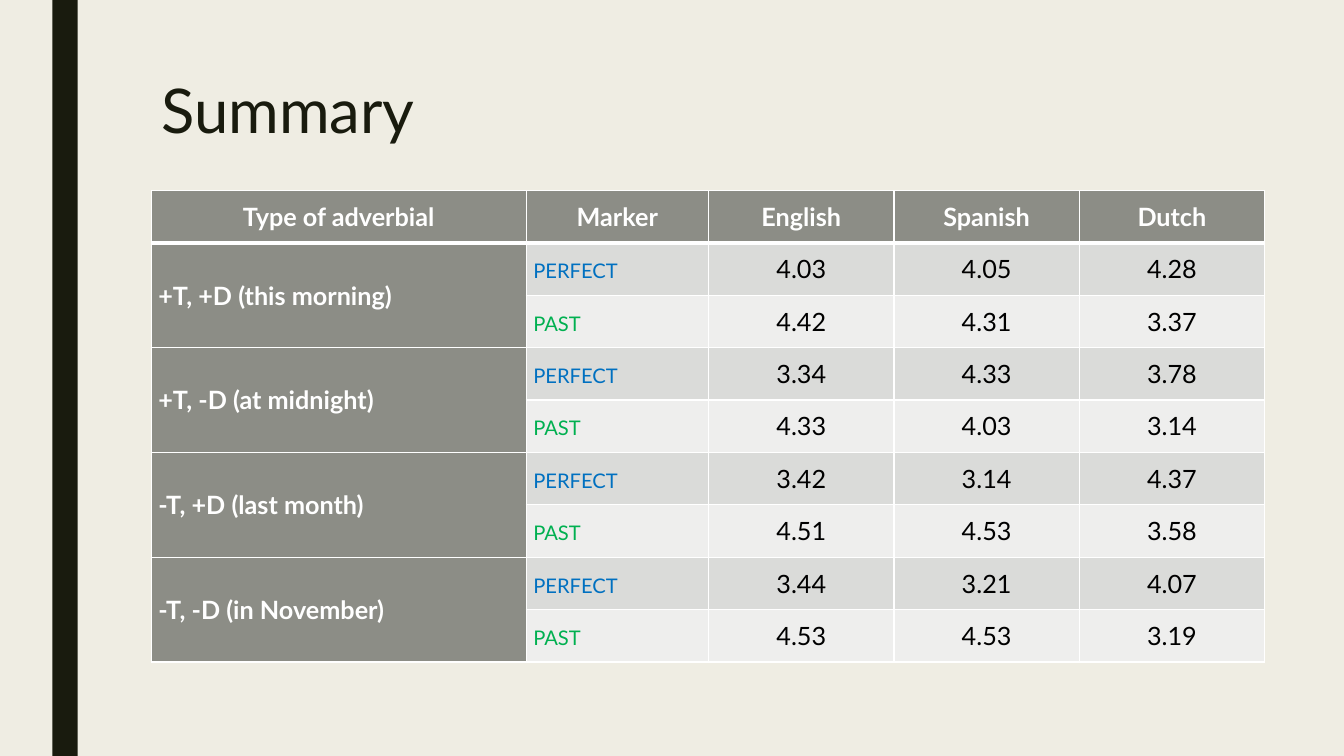
from lxml.etree import SubElement
from pptx import Presentation
from pptx.dml.color import RGBColor
from pptx.enum.shapes import MSO_SHAPE as Shape
from pptx.enum.text import MSO_ANCHOR as Anchor, MSO_AUTO_SIZE as AutoSize, PP_ALIGN as Align
from pptx.oxml.ns import qn
from pptx.util import Cm, Pt

FONT = "Lato"
CREAM = RGBColor(0xEF, 0xED, 0xE3)
INK = RGBColor(0x19, 0x1B, 0x0E)
GRAY = RGBColor(0x8C, 0x8D, 0x86)
DARK_BAND = RGBColor(0xDA, 0xDB, 0xD9)
LIGHT_BAND = RGBColor(0xEE, 0xEE, 0xED)
WHITE = RGBColor(0xFF, 0xFF, 0xFF)
BLACK = RGBColor(0x00, 0x00, 0x00)
BLUE = RGBColor(0x00, 0x70, 0xC0)
GREEN = RGBColor(0x00, 0xB0, 0x50)

HEADINGS = ["Type of adverbial", "Marker", "English", "Spanish", "Dutch"]
MARKERS = [("perfect", BLUE, DARK_BAND), ("past", GREEN, LIGHT_BAND)]
RATINGS = {
    "+T, +D (this morning)": [("4.03", "4.05", "4.28"), ("4.42", "4.31", "3.37")],
    "+T, -D (at midnight)": [("3.34", "4.33", "3.78"), ("4.33", "4.03", "3.14")],
    "-T, +D (last month)": [("3.42", "3.14", "4.37"), ("4.51", "4.53", "3.58")],
    "-T, -D (in November)": [("3.44", "3.21", "4.07"), ("4.53", "4.53", "3.19")],
}
COLUMN_WIDTHS = [9.45, 4.6, 4.67, 4.67, 4.67]
ROW_HEIGHT = 1.32
ROW_COUNT = 1 + len(MARKERS) * len(RATINGS)


def style_font(paragraph, size, color, bold=False):
    font = paragraph.font
    font.name, font.size, font.bold = FONT, Pt(size), bold
    font.color.rgb = color


def add_side_band(slide):
    band = slide.shapes.add_shape(Shape.RECTANGLE, Cm(1.32), 0, Cm(0.64), Cm(19.05))
    band.shadow.inherit = False
    band.fill.solid()
    band.fill.fore_color.rgb = INK
    band.line.fill.background()


def set_title(slide, text):
    title = slide.shapes.title
    title.left, title.top, title.width, title.height = Cm(3.81), Cm(1.91), Cm(26.67), Cm(4.11)
    frame = title.text_frame
    frame.text = text
    frame.auto_size = AutoSize.NONE
    frame.vertical_anchor = Anchor.TOP
    heading = frame.paragraphs[0]
    heading.alignment = Align.LEFT
    heading.line_spacing = 0.89
    style_font(heading, 44, INK)


def set_borders(cell, top=1, bottom=1):
    properties = cell._tc.get_or_add_tcPr()
    for side, width in (("L", 1), ("R", 1), ("T", top), ("B", bottom)):
        border = SubElement(properties, qn(f"a:ln{side}"), w=str(Pt(width)))
        paint = SubElement(border, qn("a:solidFill"))
        SubElement(paint, qn("a:srgbClr"), val=str(WHITE))


def paint_cell(cell, fill, top=1, bottom=1):
    set_borders(cell, top, bottom)
    cell.fill.solid()
    cell.fill.fore_color.rgb = fill


def write_cell(cell, text, color, align=Align.CENTER, bold=False, small_caps=False):
    cell.vertical_anchor = Anchor.MIDDLE
    cell.margin_left = cell.margin_right = Cm(0.18)
    cell.margin_top = cell.margin_bottom = 0
    cell.text = text
    paragraph = cell.text_frame.paragraphs[0]
    paragraph.alignment = align
    style_font(paragraph, 18, color, bold)
    if small_caps:
        paragraph.runs[0]._r.get_or_add_rPr().set("cap", "small")


def add_ratings_table(slide):
    table = slide.shapes.add_table(
        ROW_COUNT, len(HEADINGS), Cm(3.81), Cm(4.8),
        Cm(sum(COLUMN_WIDTHS)), Cm(ROW_HEIGHT * ROW_COUNT),
    ).table
    table.horz_banding = False
    for column, width in zip(table.columns, COLUMN_WIDTHS):
        column.width = Cm(width)
    for row in table.rows:
        row.height = Cm(ROW_HEIGHT)

    for column, heading in enumerate(HEADINGS):
        paint_cell(table.cell(0, column), GRAY, bottom=3)
        write_cell(table.cell(0, column), heading, WHITE, bold=True)

    for group, (adverbial, ratings) in enumerate(RATINGS.items()):
        first = 1 + group * len(MARKERS)
        for row, ((marker, color, band), values) in enumerate(zip(MARKERS, ratings), first):
            top = 3 if row == 1 else 1
            for column in range(len(HEADINGS)):
                paint_cell(table.cell(row, column), band if column else GRAY, top=top)
            write_cell(table.cell(row, 1), marker, color, Align.LEFT, small_caps=True)
            for column, value in enumerate(values, 2):
                write_cell(table.cell(row, column), value, BLACK)
        adverbial_cell = table.cell(first, 0)
        adverbial_cell.merge(table.cell(first + len(MARKERS) - 1, 0))
        write_cell(adverbial_cell, adverbial, WHITE, Align.LEFT, bold=True)


def main():
    deck = Presentation()
    deck.slide_width, deck.slide_height = Cm(33.87), Cm(19.05)
    slide = deck.slides.add_slide(deck.slide_layouts[5])
    slide.background.fill.solid()
    slide.background.fill.fore_color.rgb = CREAM
    add_side_band(slide)
    set_title(slide, "Summary")
    add_ratings_table(slide)
    deck.save("out.pptx")


if __name__ == "__main__":
    main()
